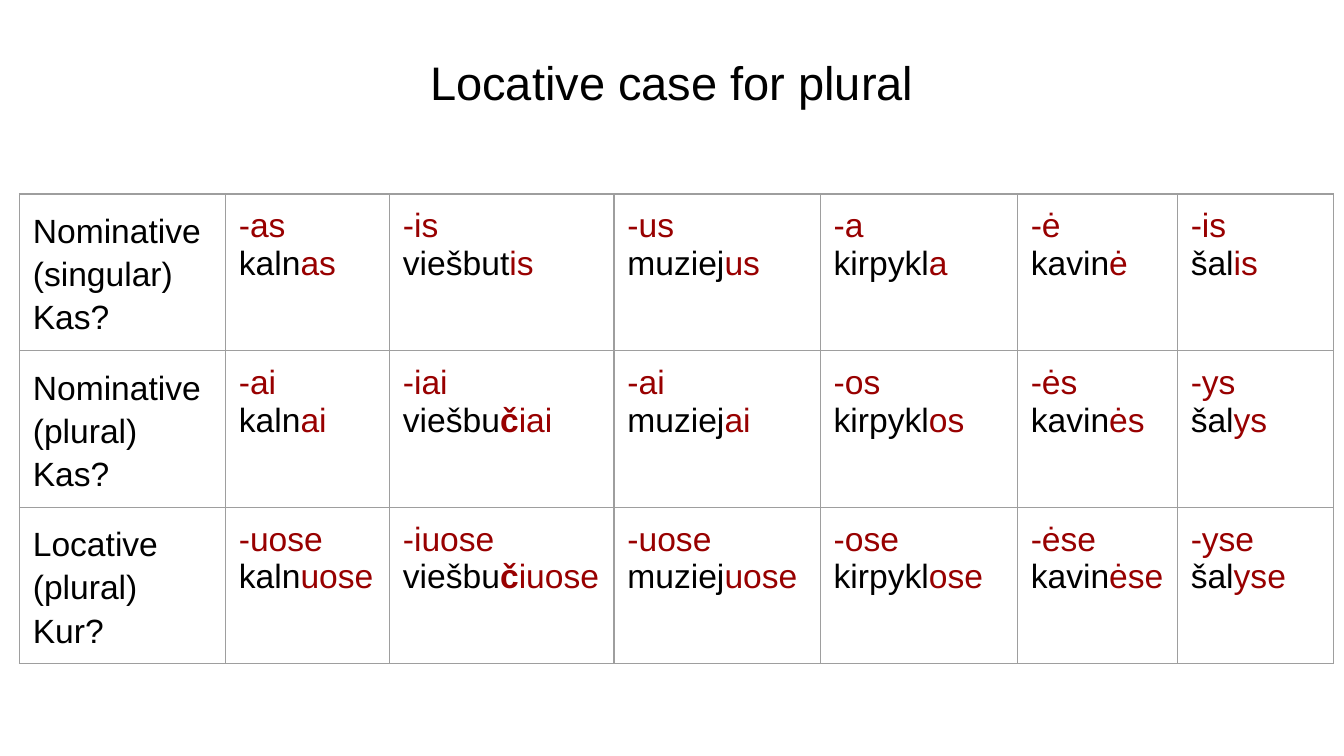
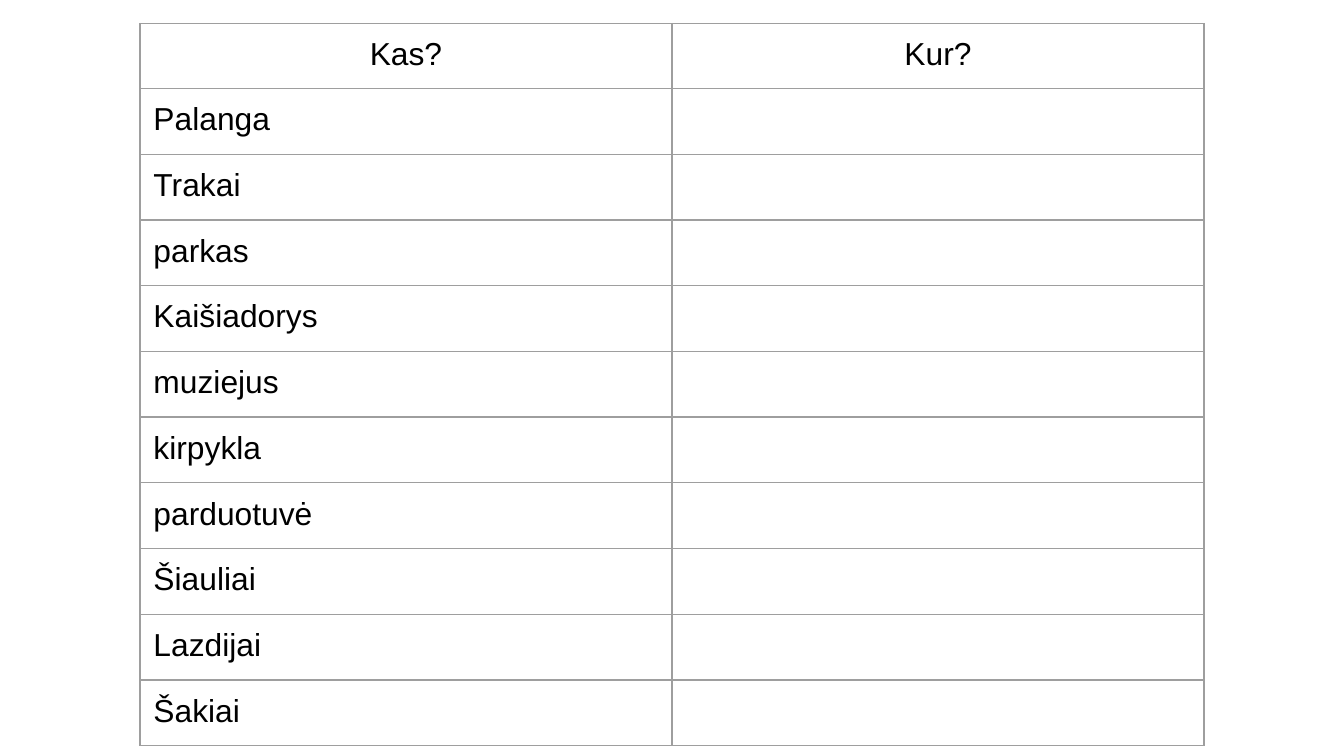
import lxml.etree
import pptx
import pptx.dml.color
import pptx.enum.text
import pptx.oxml.ns
import pptx.util

Pt = pptx.util.Pt
ALIGN = pptx.enum.text.PP_ALIGN
ANCHOR = pptx.enum.text.MSO_ANCHOR
qn = pptx.oxml.ns.qn

# Shared style
FONT = "Arial"
BLACK, ENDING_RED, GRID_GREY = "000000", "980000", "9E9E9E"
INSET = 7.2
GRID_WIDTH = 0.75

# Declension content: stem|ending, or stem|softened consonant|ending
DECLENSIONS = [
    (["Nominative", "(singular)", "Kas?"],
     ["kaln|as", "viešbut|is", "muziej|us", "kirpykl|a", "kavin|ė", "šal|is"]),
    (["Nominative", "(plural)", "Kas?"],
     ["kaln|ai", "viešbu|č|iai", "muziej|ai", "kirpykl|os", "kavin|ės", "šal|ys"]),
    (["Locative", "(plural)", "Kur?"],
     ["kaln|uose", "viešbu|č|iuose", "muziej|uose", "kirpykl|ose", "kavin|ėse", "šal|yse"]),
]
QUESTIONS = ["Kas?", "Kur?"]
PLACES = ["Palanga", "Trakai", "parkas", "Kaišiadorys", "muziejus", "kirpykla",
          "parduotuvė", "Šiauliai", "Lazdijai", "Šakiai"]


def rgb(hex_color):
    return pptx.dml.color.RGBColor.from_string(hex_color)


def write(paragraph, text, size=18, color=BLACK, bold=False, align=ALIGN.LEFT, spacing=None):
    """Append a formatted run to a paragraph."""
    paragraph.alignment = align
    if spacing:
        paragraph.line_spacing = spacing
    run = paragraph.add_run()
    run.text = text
    run.font.name = FONT
    run.font.size = Pt(size)
    run.font.bold = bold
    run.font.color.rgb = rgb(color)


def set_insets(frame):
    frame.margin_left = frame.margin_right = Pt(INSET)
    frame.margin_top = frame.margin_bottom = Pt(INSET)


def add_borders(cell):
    properties = cell._tc.get_or_add_tcPr()
    for side in ("a:lnL", "a:lnR", "a:lnT", "a:lnB"):
        line = lxml.etree.SubElement(properties, qn(side), w=str(Pt(GRID_WIDTH)))
        fill = lxml.etree.SubElement(line, qn("a:solidFill"))
        lxml.etree.SubElement(fill, qn("a:srgbClr"), val=GRID_GREY)


def add_grid(slide, left, top, widths, row_height, row_count):
    """Add an unfilled table with thin grey borders."""
    table = slide.shapes.add_table(row_count, len(widths), Pt(left), Pt(top),
                                   Pt(sum(widths)), Pt(row_height * row_count)).table
    table.first_row = table.horz_banding = False
    for column, width in zip(table.columns, widths):
        column.width = Pt(width)
    for row in table.rows:
        row.height = Pt(row_height)
    for cell in table.iter_cells():
        add_borders(cell)
        cell.fill.background()
        cell.vertical_anchor = ANCHOR.TOP
        set_insets(cell)
    return table


def add_title(slide, text, left, top, width, height):
    title = slide.shapes.title
    title.left, title.top, title.width, title.height = map(Pt, (left, top, width, height))
    frame = title.text_frame
    frame.auto_size = pptx.enum.text.MSO_AUTO_SIZE.NONE
    frame.word_wrap = True
    frame.vertical_anchor = ANCHOR.BOTTOM
    set_insets(frame)
    write(frame.paragraphs[0], text, size=25.2, align=ALIGN.CENTER)


def write_case_name(cell, lines):
    for index, line in enumerate(lines):
        frame = cell.text_frame
        paragraph = frame.add_paragraph() if index else frame.paragraphs[0]
        write(paragraph, line, spacing=1.15)


def write_noun(cell, noun):
    """Write the ending, then the whole noun with its ending in red."""
    stem, *softened, ending = noun.split("|")
    write(cell.text_frame.paragraphs[0], "-" + ending, color=ENDING_RED)
    whole_noun = cell.text_frame.add_paragraph()
    write(whole_noun, stem)
    for consonant in softened:
        write(whole_noun, consonant, color=ENDING_RED, bold=True)
    write(whole_noun, ending, color=ENDING_RED)


def build_declension_slide(deck):
    slide = deck.slides.add_slide(deck.slide_layouts[5])
    add_title(slide, "Locative case for plural", 24.5, 21, 671, 45)
    widths = [110.4, 87.9, 120.3, 110.5, 105.6, 85.7, 83.6]
    table = add_grid(slide, 10.4, 103.9, widths, 74.2, len(DECLENSIONS))
    for row, (case_name, nouns) in enumerate(DECLENSIONS):
        write_case_name(table.cell(row, 0), case_name)
        for column, noun in enumerate(nouns, start=1):
            write_noun(table.cell(row, column), noun)


def build_exercise_slide(deck):
    slide = deck.slides.add_slide(deck.slide_layouts[6])
    table = add_grid(slide, 75, 12.6, [285, 285], 34.8, len(PLACES) + 1)
    for column, question in enumerate(QUESTIONS):
        write(table.cell(0, column).text_frame.paragraphs[0], question,
              size=17, align=ALIGN.CENTER)
    for row, place in enumerate(PLACES, start=1):
        write(table.cell(row, 0).text_frame.paragraphs[0], place, size=17)
        # Keep the blank answer line as tall as the written one
        answer = table.cell(row, 1).text_frame.paragraphs[0]
        lxml.etree.SubElement(answer._p, qn("a:endParaRPr"), sz="1700")


def main():
    deck = pptx.Presentation()
    deck.slide_width, deck.slide_height = Pt(720), Pt(405)
    build_declension_slide(deck)
    build_exercise_slide(deck)
    deck.save("out.pptx")


if __name__ == "__main__":
    main()
